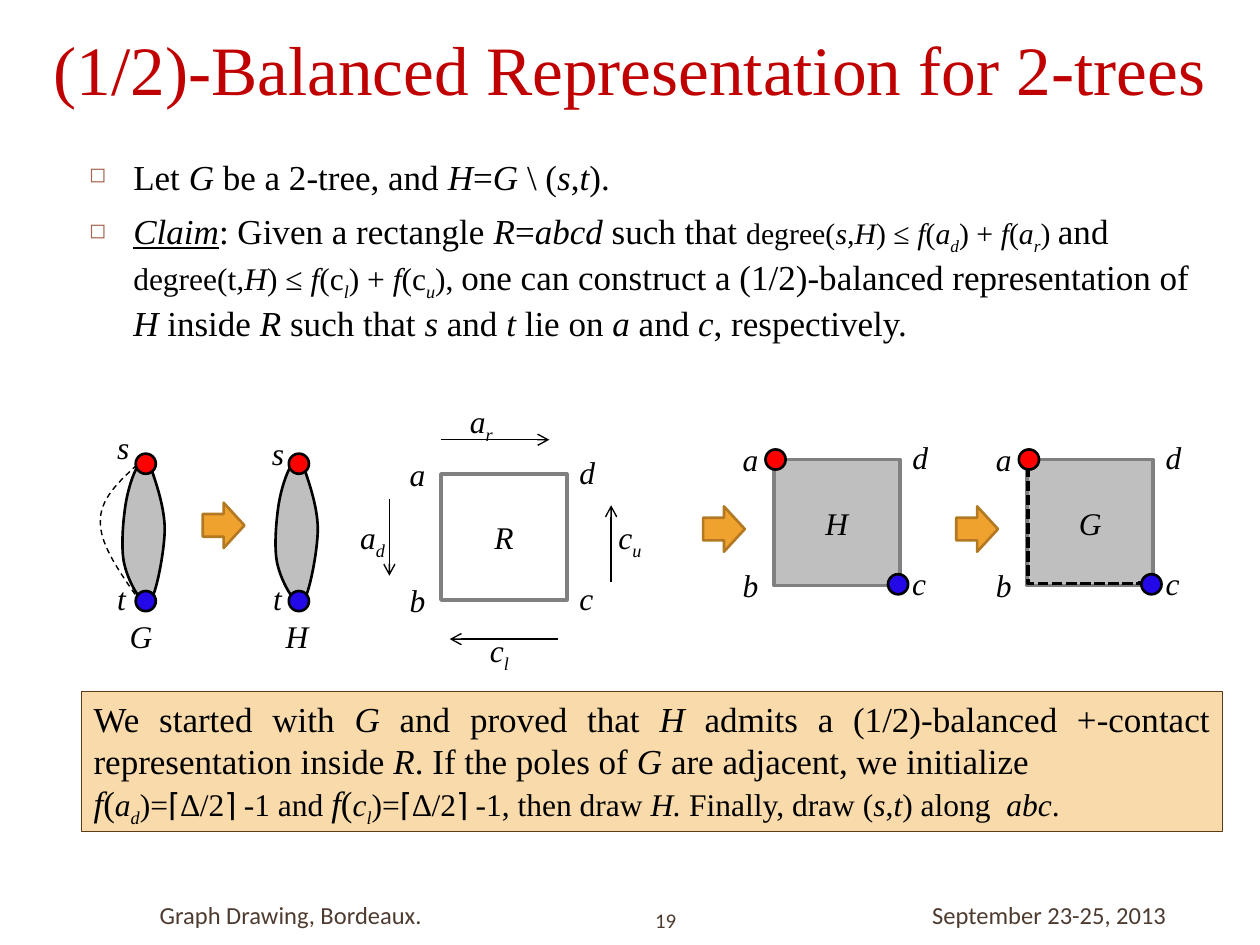
import pptx
import pptx.dml.color
import pptx.enum.dml
import pptx.enum.shapes
import pptx.enum.text
import pptx.oxml
import pptx.oxml.ns
import pptx.util

Pt = pptx.util.Pt
RGB = pptx.dml.color.RGBColor
SHAPE = pptx.enum.shapes.MSO_SHAPE
CONNECTOR = pptx.enum.shapes.MSO_CONNECTOR
ALIGN = pptx.enum.text.PP_ALIGN
ANCHOR = pptx.enum.text.MSO_ANCHOR
FIT = pptx.enum.text.MSO_AUTO_SIZE
DASH = pptx.enum.dml.MSO_LINE
NS = pptx.oxml.ns.nsdecls("a")
qn = pptx.oxml.ns.qn

BLACK = RGB(0x00, 0x00, 0x00)
TITLE_RED = RGB(0xC0, 0x00, 0x00)
FOOTER_BROWN = RGB(0x4E, 0x3B, 0x30)
NODE_RED = RGB(0xFF, 0x00, 0x00)
NODE_BLUE = RGB(0x23, 0x08, 0xE8)
FILL_GRAY = RGB(0xBF, 0xBF, 0xBF)
LINE_GRAY = RGB(0x80, 0x80, 0x80)
ARROW_FILL = RGB(0xF0, 0xA2, 0x2E)
ARROW_LINE = RGB(0xB2, 0x78, 0x22)
BOX_FILL = RGB(0xF9, 0xDA, 0xAB)
BOX_LINE = RGB(0x60, 0x3A, 0x14)

SERIF, SANS = "Times New Roman", "Calibri"
SIDE = 72       # side of the squares
NODE = 11.5     # diameter of the poles
POLE_GAP = 78.5  # from s to t
LABEL_WIDTHS = {"a": 23.6, "b": 23.6, "c": 22.4, "d": 23.6, "s": 21.4, "t": 19.4,
                "G": 27.4, "H": 27.4, "a~r~": 28.2, "a~d~": 29.5,
                "c~l~": 25.8, "c~u~": 28.6}

# Bezier control points, measured from pole s
LENS = [(3.6, 4.3), (5.8, 10.8), (10.8, 25.2), (10.8, 37.4), (10.8, 49.7),
        (5.8, 75.6), (2.2, 79.2), (-2.2, 82.1), (-10.1, 67), (-12.2, 57.6),
        (-14.4, 49), (-13, 32.4), (-11.5, 23), (-10.1, 14.4), (-7.2, 5.8),
        (-5, 2.2), (-2.9, -1.4), (0.7, -1.4), (3.6, 4.3)]
EDGE = [(-2.9, 79.2), (-14.4, 62.6), (-25.9, 46.8), (-25.9, 33.8),
        (-26.6, 20.2), (-15.1, 10.1), (-4.3, 0)]

# Markup: *italic*, ~subscript~, ^underline^, @sans@
CLAIM = [
    (20, "^*Claim*^: Given a rectangle *R*=*abcd* such that "),
    (17, "degree(*s,H*) ≤ *f*(*a~d~*) + *f*(*a~r~*) "),
    (20, "and "),
    (18, "degree(t*,H*) ≤ *f*(c*~l~*) + *f*(c*~u~*), "),
    (20, "one can construct a (1/2)-balanced representation of *H* inside *R* "
         "such that *s* and *t* lie on *a* and *c*, respectively."),
]
SUMMARY = [
    [(20, "We started with *G* and proved that *H* admits a (1/2)-balanced "
          "+-contact representation inside *R*. If the poles of *G* are "
          "adjacent, we initialize ")],
    [(20, "*f*("), (18, "*a~d~*)=@⌈@*∆*/2@⌉ @-1 and "),
     (20, "*f*("), (18, "*c~l~*)=@⌈@*∆*/2@⌉ @-1, then draw *H. *Finally, "
                        "draw (*s*,*t*) along  *abc*.")],
]


def add_runs(p, parts, color=BLACK, font=SERIF):
    """Write (size, markup) parts into paragraph p."""
    on = dict.fromkeys("*~^@", False)

    def add_run(text, size):
        r = p.add_run()
        r.text = text
        r.font.size, r.font.italic = Pt(size), on["*"]
        r.font.name = SANS if on["@"] else font
        r.font.color.rgb = color
        if on["^"]:
            r.font.underline = True
        if on["~"]:
            r.font._element.set("baseline", "-25000")

    for size, markup in parts:
        text = ""
        for ch in markup:
            if ch in on:
                if text:
                    add_run(text, size)
                text, on[ch] = "", not on[ch]
            else:
                text += ch
        if text:
            add_run(text, size)


def add_text(s, x, y, w, h, paragraphs, align=ALIGN.LEFT, anchor=ANCHOR.TOP,
             color=BLACK, font=SERIF):
    sp = s.shapes.add_textbox(Pt(x), Pt(y), Pt(w), Pt(h))
    tf = sp.text_frame
    tf.word_wrap, tf.vertical_anchor = True, anchor
    for i, parts in enumerate(paragraphs):
        p = tf.paragraphs[0] if i == 0 else tf.add_paragraph()
        p.alignment = align
        add_runs(p, parts, color, font)
    return sp


def add_label(s, x, y, markup):
    sp = add_text(s, x, y, LABEL_WIDTHS[markup], 28.8, [[(18, f"*{markup}*")]])
    sp.text_frame.word_wrap = False
    sp.text_frame.auto_size = FIT.SHAPE_TO_FIT_TEXT


def add_bullet(p):
    pPr = p._p.get_or_add_pPr()
    pPr.set("marL", str(Pt(25.2)))
    pPr.set("indent", str(-Pt(25.2)))
    for xml in (f'<a:buClr {NS}><a:srgbClr val="A5644E"/></a:buClr>',
                f'<a:buSzPct {NS} val="60000"/>',
                f'<a:buChar {NS} char="◻"/>'):
        pPr.append(pptx.oxml.parse_xml(xml))


def style(sp, fill, line, width):
    sp.shadow.inherit = False
    if fill is None:
        sp.fill.background()
    else:
        sp.fill.solid()
        sp.fill.fore_color.rgb = fill
    sp.line.color.rgb = line
    sp.line.width = Pt(width)


def add_shape(s, kind, x, y, w, h, fill, line, width):
    sp = s.shapes.add_shape(kind, Pt(x), Pt(y), Pt(w), Pt(h))
    style(sp, fill, line, width)
    return sp


def add_node(s, x, y, fill):
    add_shape(s, SHAPE.OVAL, x - NODE / 2, y - NODE / 2, NODE, NODE, fill, BLACK, 1.5)


def add_curve(s, x, y, controls, fill, width, closed):
    points = [(Pt(x + px), Pt(y + py)) for px, py in controls]
    builder = s.shapes.build_freeform(*points[0])
    builder.add_line_segments(points[1:], close=closed)
    sp = builder.convert_to_shape()
    # Join each three line segments into one Bezier segment
    lines = list(sp._element.spPr.iter(qn("a:lnTo")))
    for i in range(0, len(lines), 3):
        bezier = pptx.oxml.parse_xml(f"<a:cubicBezTo {NS}/>")
        lines[i].addprevious(bezier)
        for line in lines[i:i + 3]:
            bezier.append(line[0])
            line.getparent().remove(line)
    style(sp, fill, BLACK, width)
    return sp


def add_line(s, kind, x1, y1, x2, y2, width):
    cx = s.shapes.add_connector(kind, Pt(x1), Pt(y1), Pt(x2), Pt(y2))
    cx.line.color.rgb = BLACK
    cx.line.width = Pt(width)
    cx._element.spPr.append(pptx.oxml.parse_xml(f"<a:effectLst {NS}/>"))
    return cx


def add_arrow(s, *ends):
    cx = add_line(s, CONNECTOR.STRAIGHT, *ends, 0.79)
    cx.line._get_or_add_ln().append(pptx.oxml.parse_xml(
        f'<a:tailEnd {NS} type="arrow"/>'))


def add_path_abc(s, x, y):
    """Dashed edge from a down to b and right to c."""
    cx = add_line(s, CONNECTOR.ELBOW, x + 65.2, y + 4.8, x - 0.3, y + 68.8, 2)
    cx.line.dash_style = DASH.SQUARE_DOT
    cx._element.spPr.find(qn("a:xfrm")).set("rot", "16200000")
    geom = cx._element.spPr.find(qn("a:prstGeom"))
    geom.get_or_add_avLst().append(pptx.oxml.parse_xml(
        f'<a:gd {NS} name="adj1" fmla="val 102100"/>'))


def add_lens(s, x, y):
    add_curve(s, x, y, LENS, FILL_GRAY, 1.5, True)
    add_node(s, x, y + POLE_GAP, NODE_BLUE)
    add_node(s, x, y, NODE_RED)


def add_square(s, x, y, name, fill=None):
    sp = add_shape(s, SHAPE.RECTANGLE, x, y, SIDE, SIDE, fill, LINE_GRAY, 2)
    sp.text_frame.vertical_anchor = ANCHOR.MIDDLE
    p = sp.text_frame.paragraphs[0]
    p.alignment = ALIGN.CENTER
    add_runs(p, [(18, f"*{name}*")])
    for corner, dx, dy in (("a", -25, -14.6), ("b", -25, 57.4),
                           ("c", SIDE, 56.4), ("d", SIDE, -15.6)):
        add_label(s, x + dx, y + dy, corner)


def main():
    prs = pptx.Presentation()
    prs.slide_width, prs.slide_height = Pt(720), Pt(540)
    s = prs.slides.add_slide(prs.slide_layouts[6])

    # Title and footer
    add_text(s, 0, 0, 720, 77.8, [[(39.6, "(1/2)-Balanced Representation for 2-trees")]],
             ALIGN.CENTER, ANCHOR.MIDDLE, color=TITLE_RED)
    for x, y, w, h, size, text, align in (
            (48.2, 508.3, 203.2, 28.8, 14, "Graph Drawing, Bordeaux. ", ALIGN.RIGHT),
            (367.2, 516.2, 41.8, 19.4, 11.9, "19", ALIGN.LEFT),
            (525.6, 508.3, 164, 28.8, 14, "September 23-25, 2013", ALIGN.LEFT)):
        add_text(s, x, y, w, h, [[(size, text)]], align, ANCHOR.MIDDLE,
                 FOOTER_BROWN, SANS)

    # Claim
    body = add_text(s, 43.9, 85.2, 648, 443.5, [
        [(20, "Let *G *be a 2-tree, and *H*=*G* \\ (*s*,*t*).")], CLAIM])
    for p in body.text_frame.paragraphs:
        add_bullet(p)
    body.text_frame.paragraphs[1].space_before = Pt(7)

    # Summary box
    box = add_shape(s, SHAPE.RECTANGLE, 46.4, 394.9, 652.2, 80, BOX_FILL, BOX_LINE, 0.25)
    tf = box.text_frame
    tf.word_wrap, tf.vertical_anchor = True, ANCHOR.TOP
    for p, parts in zip((tf.paragraphs[0], tf.add_paragraph()), SUMMARY):
        p.alignment = ALIGN.JUSTIFY
        add_runs(p, parts)

    # Graphs G and H
    edge = add_curve(s, 83.3, 265, EDGE, None, 0.79, False)
    edge.line.dash_style = DASH.DASH
    for x in (83.3, 170.8):
        add_lens(s, x, 265)
    for x, y, text in ((67, 349.2, "G"), (156.2, 349.2, "H"), (59.8, 241.2, "s"),
                       (148.3, 244.4, "s"), (59.8, 327.4, "t"), (149, 327.4, "t")):
        add_label(s, x, y, text)

    # Rectangle R with its four free directions
    add_square(s, 252, 270.9, "R")
    for x, y, text in ((261.4, 226.1, "a~r~"), (198.7, 292.3, "a~d~"),
                       (272.9, 357.1, "c~l~"), (346.3, 292.3, "c~u~")):
        add_label(s, x, y, text)
    for ends in ((252, 251.3, 313.9, 251.3), (222.5, 285.1, 222.5, 329),
                 (319, 365.2, 257, 365.2), (349.2, 332.6, 349.2, 288.7)):
        add_arrow(s, *ends)

    # Drawings of H and G inside R
    for x, name in ((442.2, "H"), (587, "G")):
        add_square(s, x, 262.6, name, FILL_GRAY)
        if name == "G":
            add_path_abc(s, x, 262.6)
        add_node(s, x + 1, 262.6, NODE_RED)
        add_node(s, x + 71, 333.9, NODE_BLUE)

    # Step arrows
    for x, y in ((115.9, 287.3), (401.8, 289.4), (546.5, 289.4)):
        add_shape(s, SHAPE.RIGHT_ARROW, x, y, 23.8, 25.9, ARROW_FILL, ARROW_LINE, 1.5)

    prs.save("out.pptx")


if __name__ == "__main__":
    main()
